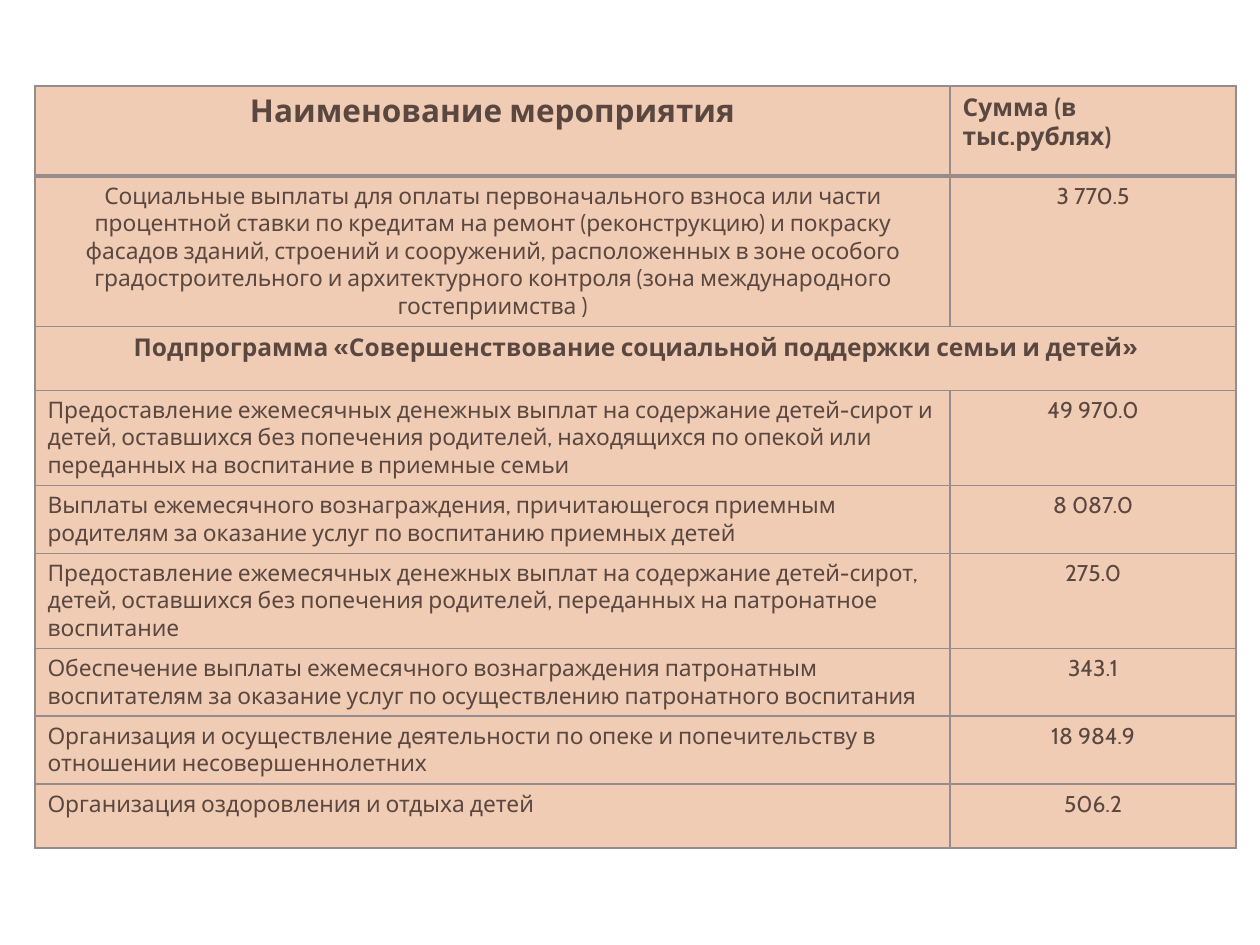
from lxml import etree
from pptx import Presentation
from pptx.dml.color import RGBColor
from pptx.enum.text import PP_ALIGN
from pptx.oxml.ns import qn
from pptx.util import Pt

LEFT, CENTER = PP_ALIGN.LEFT, PP_ALIGN.CENTER
COLORS = {"fill": "F1CCB5", "text": "594740", "border": "968C8C"}
FONT = "Cabin"


def px(n):
    return round(n * 914400 / 126)


def add_border(cell, side, points):
    line = etree.SubElement(cell._tc.get_or_add_tcPr(), qn(f"a:{side}"), w=str(Pt(points)))
    fill = etree.SubElement(line, qn("a:solidFill"))
    etree.SubElement(fill, qn("a:srgbClr"), val=COLORS["border"])


prs = Presentation()
prs.slide_width, prs.slide_height = px(1260), px(945)
slide = prs.slides.add_slide(prs.slide_layouts[6])

# Measures and their sums; a row without a sum is a subprogramme heading
rows = [
    ("Наименование мероприятия", "Сумма (в тыс.рублях)"),
    ("Социальные выплаты для оплаты первоначального взноса или части процентной ставки "
     "по кредитам на ремонт (реконструкцию) и покраску фасадов зданий, строений и сооружений, "
     "расположенных в зоне особого градостроительного и архитектурного контроля "
     "(зона международного гостеприимства )", "3 770.5"),
    ("Подпрограмма «Совершенствование социальной поддержки семьи и детей»", ""),
    ("Предоставление ежемесячных денежных выплат на содержание детей-сирот и детей, "
     "оставшихся без попечения родителей, находящихся по опекой или переданных "
     "на воспитание в приемные семьи", "49 970.0"),
    ("Выплаты ежемесячного вознаграждения, причитающегося приемным родителям "
     "за оказание услуг по воспитанию приемных детей", "8 087.0"),
    ("Предоставление ежемесячных денежных выплат на содержание детей-сирот, детей, "
     "оставшихся без попечения родителей, переданных на патронатное воспитание", "275.0"),
    ("Обеспечение выплаты ежемесячного вознаграждения патронатным воспитателям "
     "за оказание услуг по осуществлению патронатного воспитания", "343.1"),
    ("Организация и осуществление деятельности по опеке и попечительству "
     "в отношении несовершеннолетних", "18 984.9"),
    ("Организация оздоровления и отдыха детей", "506.2"),
]
column_widths = [915, 286]
row_heights = [90, 118, 64, 92, 66, 66, 66, 66, 64]
HEADER, SUBPROGRAMME = 0, 2

# Table grid
table = slide.shapes.add_table(
    len(rows), 2, px(35), px(86), px(sum(column_widths)), px(sum(row_heights))).table
for column, width in zip(table.columns, column_widths):
    column.width = px(width)
for row, height in zip(table.rows, row_heights):
    row.height = px(height)
table.cell(SUBPROGRAMME, 0).merge(table.cell(SUBPROGRAMME, 1))

# Cell text, borders and fill
for r, texts in enumerate(rows):
    for c, text in enumerate(texts):
        cell = table.cell(r, c)
        add_border(cell, "lnL", 1)
        add_border(cell, "lnR", 1)
        add_border(cell, "lnT", 2 if r == HEADER + 1 else 1)
        add_border(cell, "lnB", 2 if r == HEADER else 1)
        cell.fill.solid()
        cell.fill.fore_color.rgb = RGBColor.from_string(COLORS["fill"])
        if not text:
            continue
        cell.text_frame.text = text
        paragraph = cell.text_frame.paragraphs[0]
        if r == HEADER:
            centered = c == 0
        else:
            centered = c == 1 or r <= SUBPROGRAMME
        paragraph.alignment = CENTER if centered else LEFT
        font = paragraph.runs[0].font
        font.name = FONT
        font.bold = r in (HEADER, SUBPROGRAMME)
        font.size = Pt(18 if (r, c) == (HEADER, 0) else 14 if font.bold else 13)
        font.color.rgb = RGBColor.from_string(COLORS["text"])

prs.save("out.pptx")
